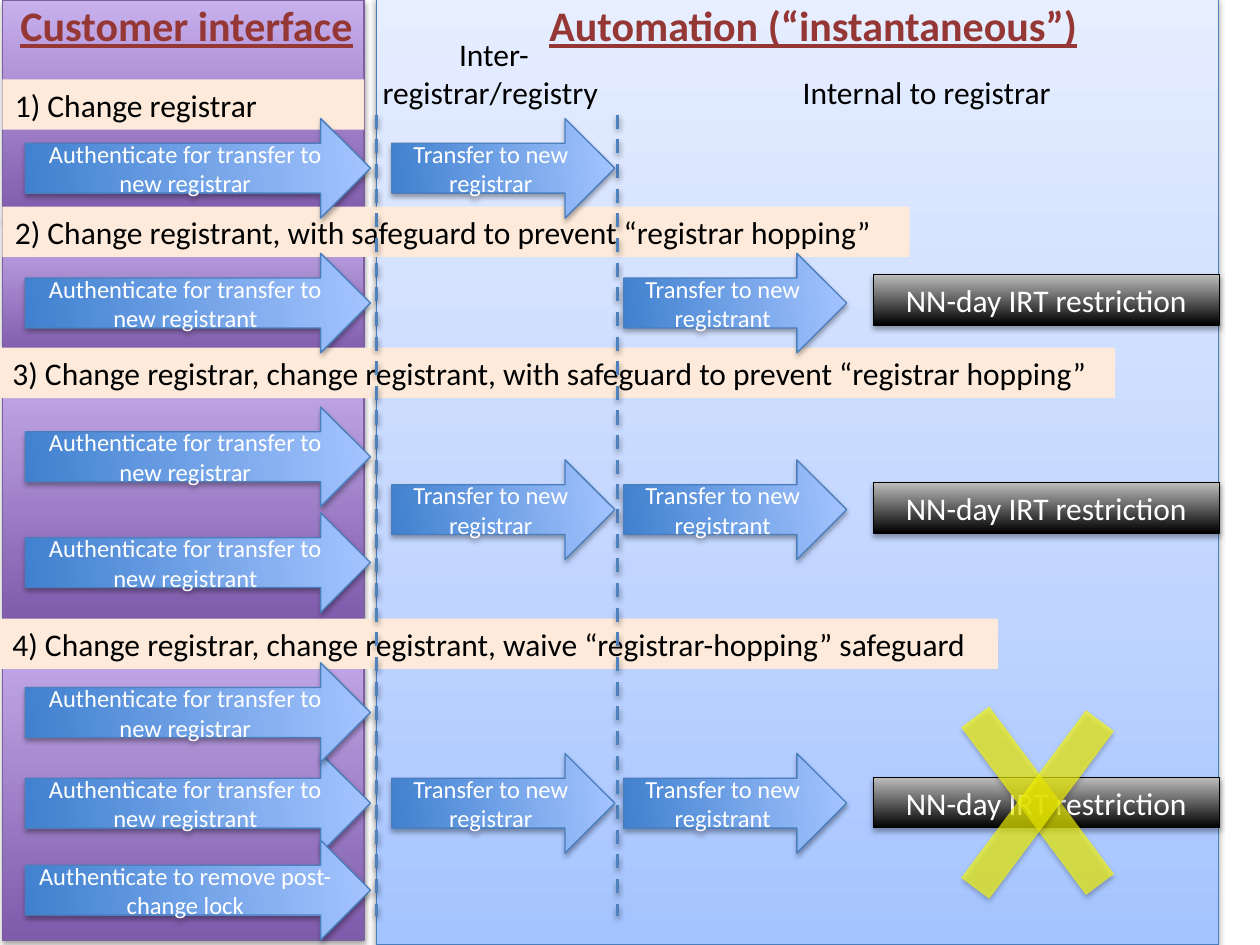
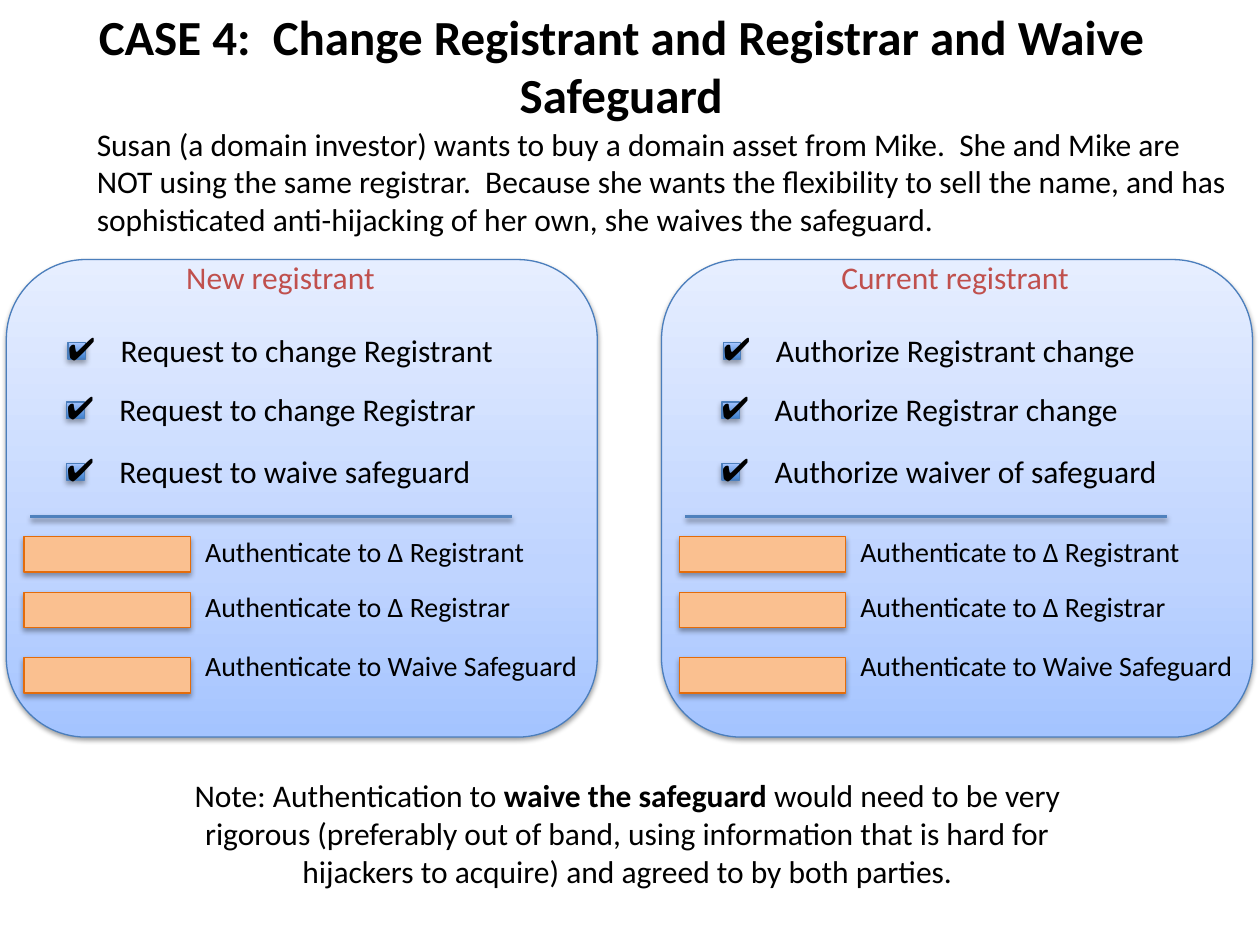
from dataclasses import dataclass

from lxml import etree
from pptx import Presentation
from pptx.dml.color import RGBColor
from pptx.enum.dml import MSO_LINE
from pptx.enum.shapes import MSO_CONNECTOR, MSO_SHAPE
from pptx.enum.text import MSO_ANCHOR, MSO_AUTO_SIZE, PP_ALIGN
from pptx.oxml.ns import qn
from pptx.util import Inches, Pt

RECT = MSO_SHAPE.RECTANGLE
ROUND = MSO_SHAPE.ROUNDED_RECTANGLE
ARROW = MSO_SHAPE.RIGHT_ARROW
STRAIGHT = MSO_CONNECTOR.STRAIGHT
DASH = MSO_LINE.DASH
LEFT, CENTER = PP_ALIGN.LEFT, PP_ALIGN.CENTER
TOP, MIDDLE = MSO_ANCHOR.TOP, MSO_ANCHOR.MIDDLE
FIT = MSO_AUTO_SIZE.SHAPE_TO_FIT_TEXT


@dataclass(frozen=True)
class Theme:
    font: str = "Calibri"
    mark_font: str = "Arial"
    # Type sizes
    title: int = 28
    head: int = 24
    body: int = 18
    item: int = 16
    small: int = 14
    # Colours
    black: str = "000000"
    white: str = "FFFFFF"
    brown: str = "953735"
    red: str = "C0504D"
    cream: str = "FDEADA"
    peach: str = "FAC090"
    orange: str = "E46C0A"
    rule: str = "4F81BD"
    yellow: str = "FFFF00"
    blue_edge: str = "4B7EBC"
    plum_edge: str = "7D60A0"
    # Gradients: angle, then stops of position and colour
    plum: tuple = (270, (0, "7F5BAB"), (100, "C8B0ED"))
    sky: tuple = (270, (0, "A4C4FF"), (35, "BFD4FF"), (100, "E6EEFF"))
    coal: tuple = (270, (0, "000000"), (100, "BDBDBD"))
    flow: tuple = (354, (0, "3F80CE"), (99, "A4C4FF"))
    chip: tuple = (270, (0, "3F80CE"), (100, "A4C4FF"))
    # Shadows: opacity in percent, drop in points
    firm: tuple = (35, 1.8)
    soft: tuple = (38, 1.6)


THEME = Theme()


def rgb(code):
    return RGBColor.from_string(code)


def add(node, tag, **attrs):
    return etree.SubElement(node, qn(tag), {k: str(v) for k, v in attrs.items()})


class Deck:
    def __init__(self, theme):
        self.theme = theme
        self.file = Presentation()
        self.file.slide_width, self.file.slide_height = Inches(10), Inches(7.5)
        self.slide = None

    def page(self):
        self.slide = self.file.slides.add_slide(self.file.slide_layouts[6])

    def shade(self, props, look):
        """Give a shape or line its drop shadow, or none."""
        effects = add(props, "a:effectLst")
        if look:
            alpha, drop = look
            cast = add(effects, "a:outerShdw", blurRad=Pt(3.1), dist=Pt(drop),
                       dir=90 * 60000, rotWithShape=0)
            color = add(cast, "a:srgbClr", val=self.theme.black)
            add(color, "a:alpha", val=alpha * 1000)

    def blend(self, shape, angle, *stops):
        """Fill a shape with a linear gradient."""
        shape.fill.gradient()
        grad = shape._element.spPr.find(qn("a:gradFill"))
        for child in list(grad):
            grad.remove(child)
        chain = add(grad, "a:gsLst")
        for place, code in stops:
            stop = add(chain, "a:gs", pos=place * 1000)
            add(stop, "a:srgbClr", val=code)
        add(grad, "a:lin", ang=angle * 60000, scaled=0)

    def style(self, frame, text, size, color, align, font=None, bold=False):
        """Set text; parts between bars are bold."""
        para = frame.paragraphs[0]
        parts = text.split("|")
        para.text = parts[0]
        for part in parts[1:]:
            para.add_run().text = part
        para.alignment = align
        for i, run in enumerate(para.runs):
            run.font.name = font or self.theme.font
            run.font.size = Pt(size)
            run.font.bold = bold or (len(parts) > 1 and i % 2 == 1)
            run.font.color.rgb = rgb(color)

    def shape(self, kind, x, y, w, h, fill, edge=None, look=None,
              text="", size=THEME.body, color=THEME.white, align=CENTER,
              anchor=MIDDLE):
        item = self.slide.shapes.add_shape(
            kind, Inches(x), Inches(y), Inches(w), Inches(h))
        if isinstance(fill, tuple):
            self.blend(item, *fill)
        else:
            item.fill.solid()
            item.fill.fore_color.rgb = rgb(fill)
        if edge:
            item.line.color.rgb = rgb(edge)
            item.line.width = Pt(0.75)
        else:
            item.line.fill.background()
        self.shade(item._element.spPr, look)
        if text:
            item.text_frame.word_wrap = True
            item.text_frame.vertical_anchor = anchor
            self.style(item.text_frame, text, size, color, align)

    def text(self, x, y, w, h, text, size=THEME.body, color=THEME.black,
             align=LEFT, wrap=True, font=None, bold=False, under=False):
        box = self.slide.shapes.add_textbox(
            Inches(x), Inches(y), Inches(w), Inches(h))
        frame = box.text_frame
        frame.word_wrap = wrap
        frame.auto_size = FIT
        self.style(frame, text, size, color, align, font, bold)
        if under:
            for run in frame.paragraphs[0].runs:
                run.font.underline = True

    def line(self, x1, y1, x2, y2, color, width, dash=None, alpha=None):
        item = self.slide.shapes.add_connector(
            STRAIGHT, Inches(x1), Inches(y1), Inches(x2), Inches(y2))
        item.line.color.rgb = rgb(color)
        item.line.width = Pt(width)
        if dash:
            item.line.dash_style = dash
        props = item._element.spPr
        if alpha:
            add(next(props.iter(qn("a:srgbClr"))), "a:alpha", val=alpha * 1000)
        self.shade(props, self.theme.soft)

    # Parts of the process chart
    def band(self, x, y, w, text):
        t = self.theme
        self.shape(RECT, x, y, w, 0.4, t.cream, text=text, size=t.body,
                   color=t.black, align=LEFT, anchor=TOP)

    def arrow(self, x, y, w, text):
        t = self.theme
        self.shape(ARROW, x, y, w, 0.79, t.flow, t.blue_edge, t.firm,
                   text, t.small, t.white)

    def lock(self, y):
        t = self.theme
        self.shape(RECT, 6.93, y, 2.75, 0.4, t.coal, t.black, t.firm,
                   "NN-day IRT restriction", t.body, t.white)

    # One party's card with its checks and proofs
    def card(self, x, name, width, asks):
        t = self.theme
        self.shape(ROUND, x + 0.05, 2.06, 4.69, 3.79, t.sky, t.blue_edge, t.soft)
        self.text(x + 1.38, 2, width, 0.4, name, t.body, t.red, wrap=False)
        for (ask, wide), y, dx in zip(asks, (2.58, 3.05, 3.54), (0.01, 0, 0)):
            left = x + dx
            self.shape(RECT, left + 0.53, y + 0.14, 0.14, 0.13,
                       t.chip, t.blue_edge, t.firm)
            self.text(left + 0.43, y - 0.02, 0.43, 0.4, "✔", t.body,
                      wrap=False, font=t.mark_font)
            self.text(left + 0.85, y, wide, 0.4, ask, t.body, wrap=False)
        self.line(x + 4.06, 4.1, x + 0.24, 4.1, t.rule, 2)
        for goal, wide, y, bar in PROOFS:
            self.shape(RECT, x + 0.19, bar, 1.32, 0.28, t.peach, t.orange, t.firm)
            self.text(x + 1.53, y, wide, 0.37, f"Authenticate to {goal}",
                      t.item, wrap=False)


PROOFS = [("Δ Registrant", 2.79, 4.19, 4.26),
          ("Δ Registrar", 2.68, 4.63, 4.7),
          ("Waive Safeguard", 3.22, 5.1, 5.22)]


def chart(deck):
    t = deck.theme
    deck.page()

    # Background panels
    for y, h in ((4.94, 2.52), (2.81, 2.13), (1.73, 1.09), (0, 1.73)):
        deck.shape(RECT, 0.02, y, 2.87, h, t.plum, t.plum_edge, t.firm)
    deck.shape(RECT, 2.99, -0.01, 6.68, 7.51, t.sky, t.blue_edge, t.soft)

    # Column heads
    for x, w, head in ((-0.5, 3.96, "Customer interface"),
                       (3.67, 5.57, "Automation (“instantaneous”)")):
        deck.text(x, -0.05, w, 0.5, head, t.head, t.brown, CENTER,
                  bold=True, under=True)
    deck.text(2.89, 0.23, 2.06, 0.71, "Inter-\nregistrar/registry ", align=CENTER)
    deck.text(5.98, 0.53, 2.75, 0.4, "Internal to registrar", align=CENTER)

    # Case bands
    guard = "with safeguard to prevent “registrar hopping”"
    deck.band(0.02, 0.63, 2.87, "1) Change registrar")
    deck.band(0.02, 1.64, 7.2, f"2) Change registrant, {guard}")
    deck.band(0, 2.76, 8.85, f"3) Change registrar, change registrant, {guard}")
    deck.band(0, 4.91, 7.92, "4) Change registrar, change registrant, "
                             "waive “registrar-hopping” safeguard")

    # Column rules
    for x in (2.99, 4.9):
        deck.line(x, 0.91, x, 7.27, t.rule, 2, DASH)

    # Steps in each column
    prove = "Authenticate for transfer to new "
    move = "Transfer to new "
    lanes = [
        (0.2, 2.74, prove + "registrant", (2.01, 4.07, 5.98)),
        (0.2, 2.74, "Authenticate to remove post-change lock", (6.67,)),
        (0.2, 2.74, prove + "registrar", (0.94, 3.23, 5.26)),
        (3.11, 1.77, move + "registrar", (0.94, 3.65, 5.98)),
        (4.95, 1.77, move + "registrant", (2.01, 3.65, 5.98)),
    ]
    for x, w, step, tops in lanes:
        for y in tops:
            deck.arrow(x, y, w, step)
    for y in (2.18, 3.83, 6.17):
        deck.lock(y)

    # Cross over the waived lock
    for x1, x2, y in ((7.74, 8.73, 5.69), (8.73, 7.74, 5.72)):
        deck.line(x1, y, x2, y + 1.33, t.yellow, 20, alpha=63)


def case(deck):
    t = deck.theme
    deck.page()

    # Title and story
    deck.text(0.67, 0, 8.52, 1.04,
              "CASE 4:  Change Registrant and Registrar and Waive Safeguard",
              t.title, align=CENTER, bold=True)
    deck.text(0.67, 0.94, 9.17, 1.01,
              "Susan (a domain investor) wants to buy a domain asset from Mike.  "
              "She and Mike are NOT using the same registrar.  Because she wants "
              "the flexibility to sell the name, and has sophisticated "
              "anti-hijacking of her own, she waives the safeguard.")

    # Both parties
    deck.card(0, "New registrant", 1.73,
              [("Request to change Registrant", 3.33),
               ("Request to change Registrar", 3.2),
               ("Request to waive safeguard", 3.04)])
    deck.card(5.2, "Current registrant", 2.04,
              [("Authorize Registrant change", 3.1),
               ("Authorize Registrar change", 2.97),
               ("Authorize waiver of safeguard", 3.29)])

    # Closing note
    deck.text(1.3, 6.11, 7.36, 1.01,
              "Note: Authentication to |waive the safeguard| would need to be "
              "very rigorous (preferably out of band, using information that is "
              "hard for hijackers to acquire) and agreed to by both parties.",
              align=CENTER)


def main():
    deck = Deck(THEME)
    chart(deck)
    case(deck)
    deck.file.save("out.pptx")


if __name__ == "__main__":
    main()
